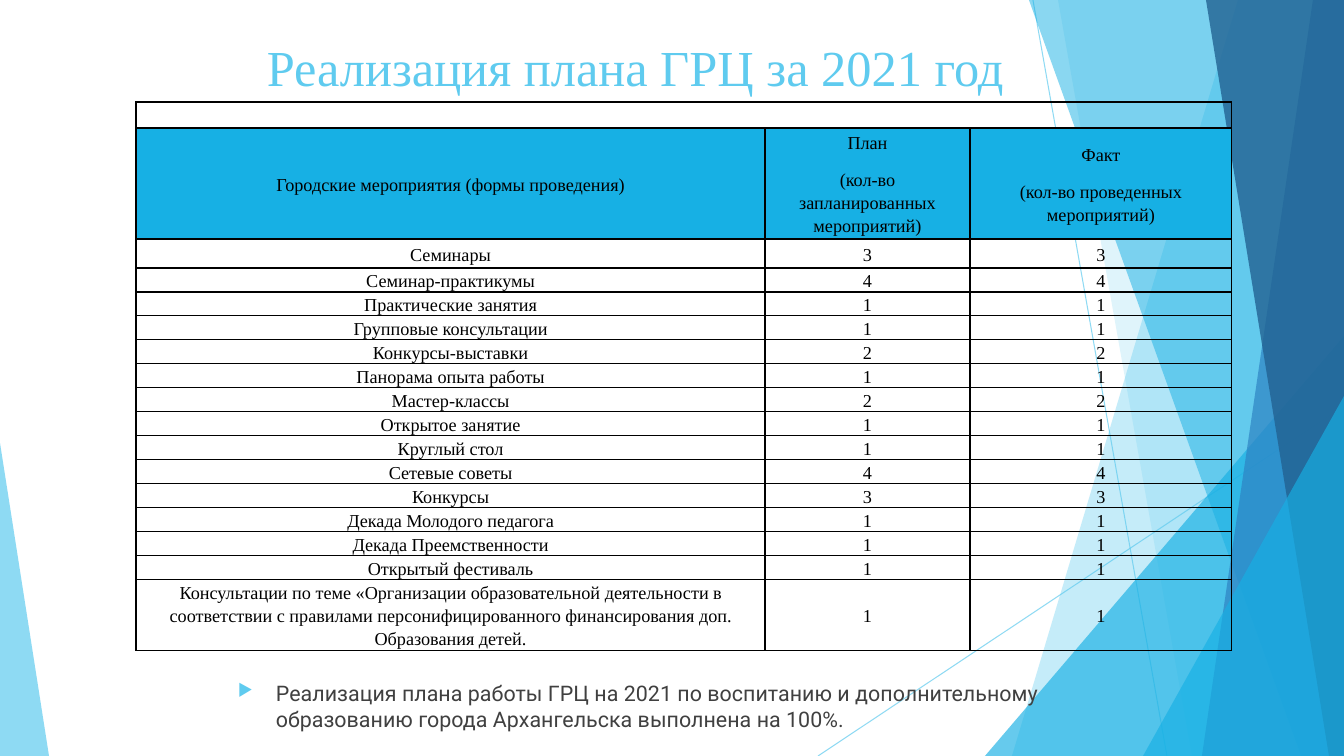
from lxml.etree import SubElement
from pptx import Presentation
from pptx.dml.color import RGBColor
from pptx.enum.shapes import MSO_CONNECTOR as CONNECTOR, MSO_SHAPE as SHAPE
from pptx.enum.text import MSO_ANCHOR as ANCHOR, PP_ALIGN as ALIGN
from pptx.oxml.ns import qn
from pptx.util import Emu, Pt

TITLE = "Реализация плана ГРЦ за 2021 год"
SUMMARY = ("Реализация плана работы ГРЦ на 2021 по воспитанию и дополнительному "
           "образованию города Архангельска выполнена на 100%.")
HEADER = ("Городские мероприятия (формы проведения)",
          "План\n(кол-во запланированных мероприятий)",
          "Факт\n(кол-во проведенных мероприятий)")
EVENTS = [
    ("Семинары", 3, 3),
    ("Семинар-практикумы", 4, 4),
    ("Практические занятия", 1, 1),
    ("Групповые консультации", 1, 1),
    ("Конкурсы-выставки", 2, 2),
    ("Панорама опыта работы", 1, 1),
    ("Мастер-классы", 2, 2),
    ("Открытое занятие", 1, 1),
    ("Круглый стол", 1, 1),
    ("Сетевые советы", 4, 4),
    ("Конкурсы", 3, 3),
    ("Декада Молодого педагога", 1, 1),
    ("Декада Преемственности", 1, 1),
    ("Открытый фестиваль", 1, 1),
    ("Консультации по теме «Организации образовательной деятельности в "
     "соответствии с правилами персонифицированного финансирования доп. "
     "Образования детей.", 1, 1),
]
COLORS = {"sky": "5FCBEF", "azure": "17B0E4", "blue": "2E83C3", "navy": "226292",
          "black": "000000", "gray": "404040"}
WIDTH, HEIGHT = 1344, 756
PX = 12192000 / WIDTH
COLUMNS = (629, 205, 262)
ROWS = [26, 111, 29] + [24] * (len(EVENTS) - 2) + [71]
TABLE_LEFT, TABLE_TOP = 136, 102

RAYS = [((1033, 0), (1167, HEIGHT)), ((WIDTH, 406), (818, HEIGHT))]
FACETS = [
    ("band", (1238, 1012), "sky", 36),
    ("band", (1058, 1192), "sky", 20),
    ("triangle", (985, 336, 359, 420, 1), "azure", 66),
    ("band", (1029, 1301), "azure", 50),
    ("band", (1313, 1202), "blue", 70),
    ("band", (1206, 1329), "navy", 80),
    ("triangle", (1143, 396, 201, 360, 1), "azure", 66),
    ("triangle", (0, 443, 49, 313, 0), "sky", 70),
]
TITLE_FONT = {"name": "Times New Roman", "size": Pt(36)}
TABLE_FONT = {"name": "Times New Roman", "size": Pt(13)}
SUMMARY_FONT = {"name": "Roboto", "size": Pt(15.3)}
CELL_FORMAT = {"vertical_anchor": ANCHOR.MIDDLE, "margin_left": Pt(5),
               "margin_right": Pt(5), "margin_top": 0, "margin_bottom": 0}
CELL_PARAGRAPH = {"alignment": ALIGN.CENTER, "line_spacing": 1.15, "space_after": Pt(10)}


def px(*lengths):
    return [Emu(round(length * PX)) for length in lengths]


def color(name):
    return RGBColor.from_string(COLORS[name])


def apply(target, values):
    for name, value in values.items():
        setattr(target, name, value)


def set_alpha(shape, percent):
    for fill_color in shape._element.spPr.iter(qn("a:srgbClr")):
        SubElement(fill_color, qn("a:alpha"), val=str(percent * 1000))


def add_ray(slide, start, end):
    ray = slide.shapes.add_connector(CONNECTOR.STRAIGHT, *px(*start, *end))
    ray.line.width = Pt(0.75)
    ray.line.color.rgb = color("sky")
    set_alpha(ray, 70)
    SubElement(ray._element.spPr, qn("a:effectLst"))


def add_facet(slide, kind, place, fill, alpha):
    if kind == "band":
        top, bottom = place
        builder = slide.shapes.build_freeform(top, 0, scale=PX)
        builder.add_line_segments([(WIDTH, 0), (WIDTH, HEIGHT), (bottom, HEIGHT)])
        facet = builder.convert_to_shape()
    else:
        facet = slide.shapes.add_shape(SHAPE.ISOSCELES_TRIANGLE, *px(*place[:4]))
        facet.adjustments[0] = place[4]
    facet.shadow.inherit = False
    facet.fill.solid()
    facet.fill.fore_color.rgb = color(fill)
    facet.line.fill.background()
    set_alpha(facet, alpha)


def write(paragraph, text, font, font_color):
    run = paragraph.add_run()
    run.text = text
    apply(run.font, font)
    run.font.color.rgb = color(font_color)


def add_borders(cell):
    properties = cell._tc.get_or_add_tcPr()
    for position, side in enumerate(("lnL", "lnR", "lnT", "lnB")):
        border = SubElement(properties, qn(f"a:{side}"), w=str(Pt(1)))
        fill = SubElement(border, qn("a:solidFill"))
        SubElement(fill, qn("a:srgbClr"), val=COLORS["black"])
        properties.remove(border)
        properties.insert(position, border)


def fill_cell(cell, text, is_header):
    apply(cell, CELL_FORMAT)
    if is_header:
        cell.fill.solid()
        cell.fill.fore_color.rgb = color("azure")
    else:
        cell.fill.background()
    add_borders(cell)
    for index, line in enumerate(text.split("\n")):
        frame = cell.text_frame
        paragraph = frame.add_paragraph() if index else frame.paragraphs[0]
        apply(paragraph, CELL_PARAGRAPH)
        if line:
            write(paragraph, line, TABLE_FONT, "black")
        else:
            SubElement(paragraph._p, qn("a:endParaRPr"), sz="1300")


def add_event_table(slide):
    frame = slide.shapes.add_table(len(ROWS), len(COLUMNS), *px(
        TABLE_LEFT, TABLE_TOP, sum(COLUMNS), sum(ROWS)))
    table = frame.table
    apply(table, {"first_row": False, "horz_banding": False})
    for column, width in zip(table.columns, px(*COLUMNS)):
        column.width = width
    for row, height in zip(table.rows, px(*ROWS)):
        row.height = height
    for row_index, values in enumerate([("", "", ""), HEADER, *EVENTS]):
        for column_index, value in enumerate(values):
            fill_cell(table.cell(row_index, column_index), str(value), row_index == 1)
    table.cell(0, 0).merge(table.cell(0, len(COLUMNS) - 1))


def add_text(slide, place, text, font, font_color, anchor):
    frame = slide.shapes.add_textbox(*px(*place)).text_frame
    apply(frame, {"word_wrap": True, "vertical_anchor": anchor})
    paragraph = frame.paragraphs[0]
    write(paragraph, text, font, font_color)
    return paragraph


def add_bullet(paragraph):
    paragraph.space_before = Pt(10)
    properties = paragraph._p.get_or_add_pPr()
    indent = px(38)[0]
    properties.set("marL", str(indent))
    properties.set("indent", str(-indent))
    bullet_color = SubElement(properties, qn("a:buClr"))
    SubElement(bullet_color, qn("a:srgbClr"), val=COLORS["sky"])
    SubElement(properties, qn("a:buSzPct"), val="80000")
    SubElement(properties, qn("a:buChar"), char="▶")


def main():
    presentation = Presentation()
    presentation.slide_width, presentation.slide_height = px(WIDTH, HEIGHT)
    slide = presentation.slides.add_slide(presentation.slide_layouts[6])
    for start, end in RAYS:
        add_ray(slide, start, end)
    for facet in FACETS:
        add_facet(slide, *facet)
    add_event_table(slide)
    add_text(slide, (257, 30, 908, 72), TITLE, TITLE_FONT, "sky", ANCHOR.BOTTOM)
    add_bullet(add_text(slide, (228, 675, 831, 79), SUMMARY, SUMMARY_FONT, "gray", ANCHOR.TOP))
    presentation.save("out.pptx")


if __name__ == "__main__":
    main()
